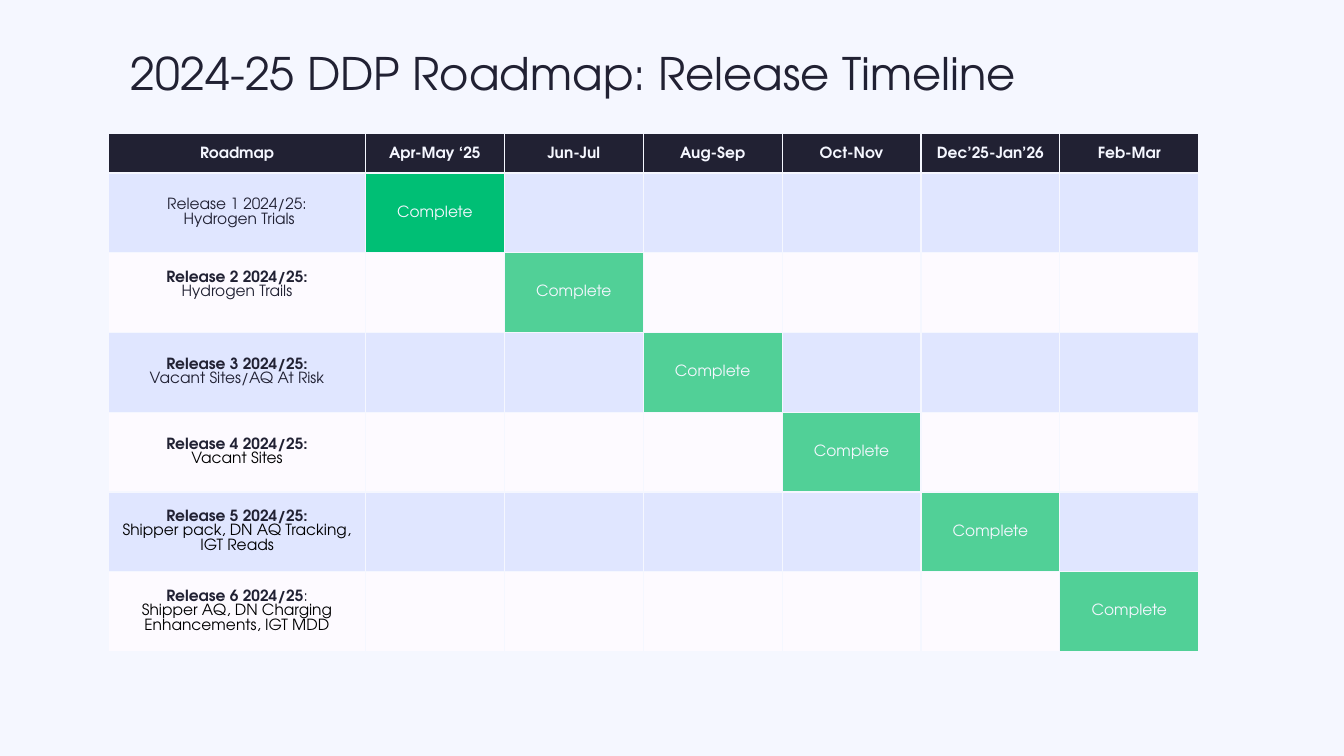
from lxml.etree import SubElement
from pptx import Presentation
from pptx.dml.color import RGBColor
from pptx.enum.text import MSO_ANCHOR, PP_ALIGN
from pptx.oxml.ns import qn
from pptx.util import Cm, Pt

FONT = "TeX Gyre Adventor"
NAVY = RGBColor(0x21, 0x21, 0x33)
PALE = RGBColor(0xF5, 0xF7, 0xFF)
BLACK = RGBColor(0x00, 0x00, 0x00)
LAVENDER = RGBColor(0xE0, 0xE6, 0xFF)
OFF_WHITE = RGBColor(0xFD, 0xFA, 0xFF)
GREEN = RGBColor(0x00, 0xBF, 0x75)
LIGHT_GREEN = RGBColor(0x51, 0xD0, 0x97)

TITLE = "2024-25 DDP Roadmap: Release Timeline"
HEADINGS = ["Roadmap", "Apr-May ‘25", "Jun-Jul", "Aug-Sep", "Oct-Nov",
            "Dec’25-Jan’26", "Feb-Mar"]
STATUS = "Complete"
# Each release: paragraphs of (text, bold, colour) runs, then the status colour.
# Release n is completed in the nth period.
RELEASES = [
    ([[("Release 1 2024/25:", False, NAVY)],
      [(" Hydrogen Trials", False, NAVY)]], GREEN),
    ([[("Release 2 2024/25:", True, NAVY)],
      [("Hydrogen Trails", False, NAVY)]], LIGHT_GREEN),
    ([[("Release 3 2024/25:", True, NAVY)],
      [("Vacant Sites/AQ At Risk", False, NAVY)]], LIGHT_GREEN),
    ([[("Release 4 2024/25:", True, NAVY)],
      [("Vacant Sites", False, BLACK)]], LIGHT_GREEN),
    ([[("Release 5 2024/25:", True, NAVY)],
      [("Shipper pack, DN AQ Tracking, IGT Reads", False, BLACK)]], LIGHT_GREEN),
    ([[("Release 6 2024/25", True, NAVY), (":", False, NAVY)],
      [("Shipper AQ, DN Charging Enhancements, IGT MDD", False, BLACK)]],
     LIGHT_GREEN),
]
RAISED_RELEASE = 2  # its label sits above the middle of the row

LABEL_WIDTH, PERIOD_WIDTH = Cm(6.47), Cm(3.5)
HEADING_HEIGHT, RELEASE_HEIGHT = Cm(1), Cm(2.01)
HEADING_MARGINS = {"margin_left": Cm(0.03), "margin_right": Cm(0.03),
                   "margin_top": Cm(0.03), "margin_bottom": Cm(0)}
BODY_MARGINS = {"margin_left": Cm(0.13), "margin_right": Cm(0.13),
                "margin_top": Cm(0.13), "margin_bottom": Cm(0.13)}
RAISED_MARGINS = {**BODY_MARGINS, "margin_bottom": Cm(0.5)}


def set_all(target, values):
    for name, value in values.items():
        setattr(target, name, value)


def add_text(paragraph, text, size, bold, colour):
    run = paragraph.add_run()
    run.text = text
    set_all(run.font, {"name": FONT, "size": Pt(size), "bold": bold})
    run.font.color.rgb = colour


def paint_cell(cell, colour):
    """Give the cell its four borders and its fill."""
    properties = cell._tc.get_or_add_tcPr()
    for side in ("lnL", "lnR", "lnT", "lnB"):
        border = SubElement(properties, qn(f"a:{side}"), w=str(Pt(1)))
        fill = SubElement(border, qn("a:solidFill"))
        SubElement(fill, qn("a:srgbClr"), val=str(PALE))
    cell.fill.solid()
    cell.fill.fore_color.rgb = colour


def write_cell(cell, paragraphs, margins):
    set_all(cell, {"vertical_anchor": MSO_ANCHOR.MIDDLE, **margins})
    frame = cell.text_frame
    for index, runs in enumerate(paragraphs):
        paragraph = frame.add_paragraph() if index else frame.paragraphs[0]
        paragraph.alignment = PP_ALIGN.CENTER
        for text, bold, colour in runs:
            add_text(paragraph, text, 11, bold, colour)


def add_title(slide):
    title = slide.shapes.add_textbox(Cm(3.05), Cm(1.02), Cm(29.54), Cm(1.78))
    set_all(title.text_frame,
            {"word_wrap": True, "vertical_anchor": MSO_ANCHOR.MIDDLE})
    paragraph = title.text_frame.paragraphs[0]
    paragraph.line_spacing = 0.9
    add_text(paragraph, TITLE, 32, False, NAVY)


def add_roadmap(slide):
    periods = len(HEADINGS) - 1
    roadmap = slide.shapes.add_table(
        len(RELEASES) + 1, len(HEADINGS), Cm(2.74), Cm(3.36),
        LABEL_WIDTH + periods * PERIOD_WIDTH,
        HEADING_HEIGHT + len(RELEASES) * RELEASE_HEIGHT).table
    for index, column in enumerate(roadmap.columns):
        column.width = PERIOD_WIDTH if index else LABEL_WIDTH
    for index, row in enumerate(roadmap.rows):
        row.height = RELEASE_HEIGHT if index else HEADING_HEIGHT

    for column, heading in enumerate(HEADINGS):
        cell = roadmap.cell(0, column)
        paint_cell(cell, NAVY)
        write_cell(cell, [[(heading, True, PALE)]], HEADING_MARGINS)

    for number, (label, status_colour) in enumerate(RELEASES, start=1):
        band = LAVENDER if number % 2 else OFF_WHITE
        for column in range(len(HEADINGS)):
            paint_cell(roadmap.cell(number, column),
                       status_colour if column == number else band)
        write_cell(roadmap.cell(number, 0), label,
                   RAISED_MARGINS if number == RAISED_RELEASE else BODY_MARGINS)
        write_cell(roadmap.cell(number, number), [[(STATUS, False, PALE)]],
                   BODY_MARGINS)


def main():
    deck = Presentation()
    set_all(deck, {"slide_width": Cm(33.87), "slide_height": Cm(19.05)})
    slide = deck.slides.add_slide(deck.slide_layouts[6])
    slide.background.fill.solid()
    slide.background.fill.fore_color.rgb = PALE
    add_title(slide)
    add_roadmap(slide)
    deck.save("out.pptx")


if __name__ == "__main__":
    main()
